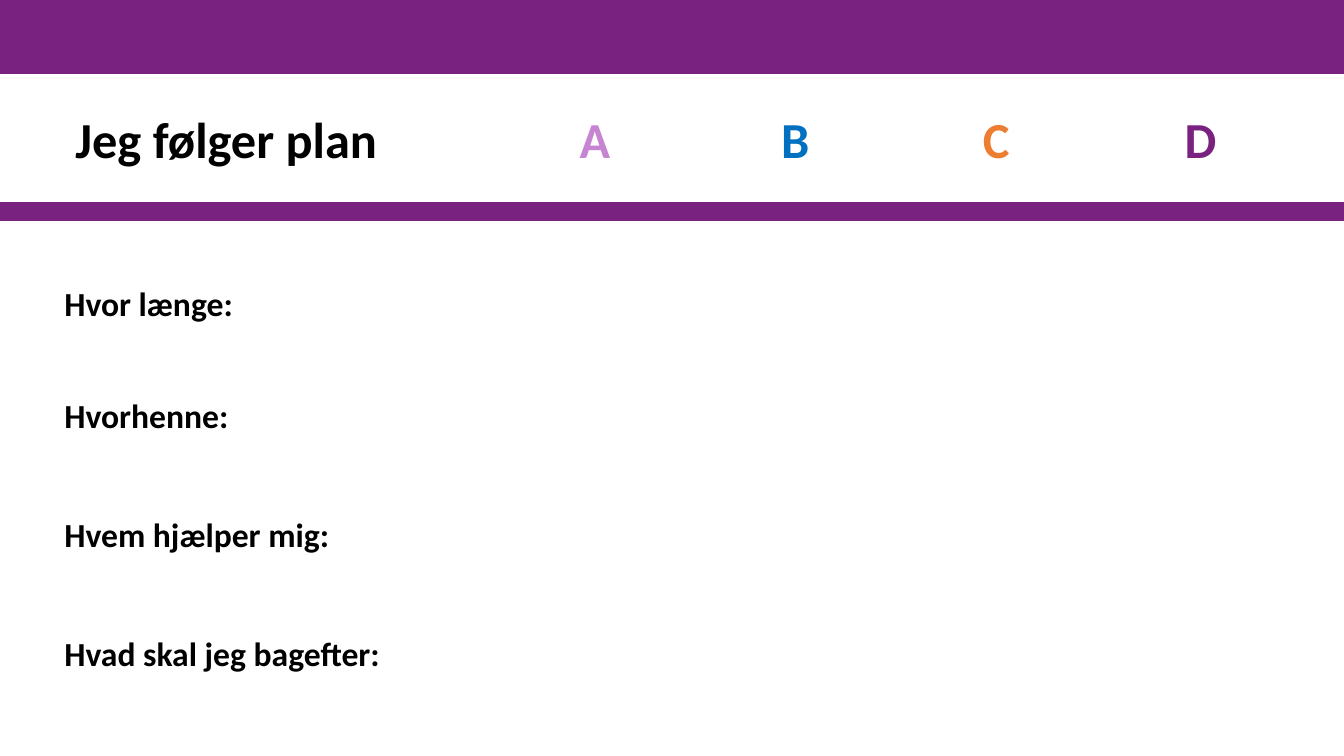
import pptx
import pptx.dml.color
import pptx.enum.shapes
import pptx.oxml.ns
import pptx.util
from lxml import etree

Inches = pptx.util.Inches
PURPLE = "7A227F"
BLACK = "000000"


def color(hex_value):
    return pptx.dml.color.RGBColor.from_string(hex_value)


def add_label(left, top, width, height, size, parts):
    """Add a one-line text box; parts are (text, colour) pairs. Return its paragraph."""
    box = page.shapes.add_textbox(Inches(left), Inches(top), Inches(width), Inches(height))
    box.text_frame.word_wrap = True
    para = box.text_frame.paragraphs[0]
    for text, hex_value in parts:
        span = para.add_run()
        span.text = text
        font_format = {"name": "Calibri", "size": pptx.util.Pt(size), "bold": True}
        for name, value in font_format.items():
            setattr(span.font, name, value)
        span.font.color.rgb = color(hex_value)
    return para


deck = pptx.Presentation()
deck.slide_width = Inches(13.33)
deck.slide_height = Inches(7.5)
page = deck.slides.add_slide(deck.slide_layouts[6])

# Heading with the four plan letters on evenly spaced tab stops
plans = [("A", "C784D2"), ("B", "0070C0"), ("C", "ED7D31"), ("D", PURPLE)]
heading_parts = [("Jeg følger plan", BLACK)]
heading_parts += [("\t" + letter, hex_value) for letter, hex_value in plans]
heading = add_label(0.65, 1.02, 11.84, 0.71, 36, heading_parts)
qn = pptx.oxml.ns.qn
tab_list = etree.SubElement(heading._p.get_or_add_pPr(), qn("a:tabLst"))
for column in range(len(plans)):
    etree.SubElement(tab_list, qn("a:tab"), pos=str(Inches(5 + 2 * column)), algn="l")

# Full-width bands above and below the heading
for top, height in [(0, 0.73), (2.01, 0.18)]:
    band = page.shapes.add_shape(
        pptx.enum.shapes.MSO_SHAPE.RECTANGLE, 0, Inches(top), deck.slide_width, Inches(height))
    band.shadow.inherit = False
    band.fill.solid()
    band.fill.fore_color.rgb = color(PURPLE)
    band.line.color.rgb = color(PURPLE)
    band.line.width = pptx.util.Pt(1)

questions = [
    ("Hvor længe:", 2.76, 2.21),
    ("Hvorhenne:", 3.87, 2.21),
    ("Hvem hjælper mig:", 5.05, 2.94),
    ("Hvad skal jeg bagefter:", 6.23, 3.46),
]
for question, top, width in questions:
    add_label(0.54, top, width, 0.5, 24, [(question, BLACK)])

deck.save("out.pptx")
